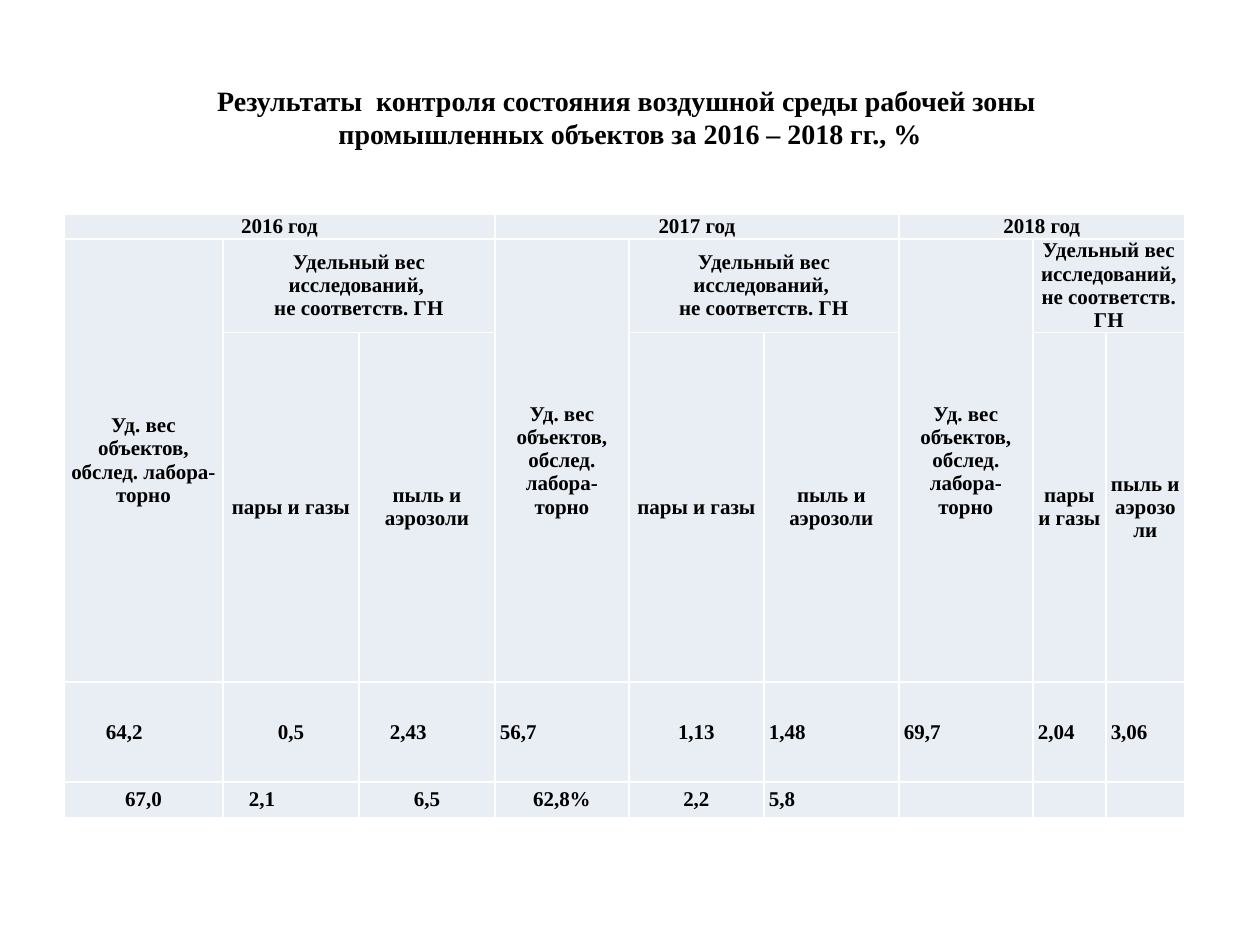
import copy
from dataclasses import dataclass

import pptx
import pptx.dml.color
import pptx.enum.text
import pptx.oxml
import pptx.oxml.ns
import pptx.util

EMU_PER_PX = 914400 / 126
CENTER = pptx.enum.text.PP_ALIGN.CENTER
LEFT = pptx.enum.text.PP_ALIGN.LEFT
MIDDLE = pptx.enum.text.MSO_ANCHOR.MIDDLE


@dataclass(frozen=True)
class Theme:
    font: str = "Times New Roman"
    ink: str = "000000"
    cell_fill: str = "E9EDF4"
    border: str = "FFFFFF"
    border_points: int = 1
    title_size: int = 16
    table_size: int = 12


@dataclass(frozen=True)
class Entry:
    """A table cell's text, alignment, left indent in px and span."""
    text: str
    align: pptx.enum.text.PP_ALIGN = CENTER
    indent: int = 0
    rows: int = 1
    columns: int = 1


THEME = Theme()
COLUMN_WIDTHS = [159, 136, 136, 134, 135, 135, 134, 73, 79]
ROW_HEIGHTS = [25, 76, 350, 100, 25]
YEARS = ["2016 год", "2017 год", "2018 год"]
SHARE_HEADINGS = [
    "Удельный вес исследований, \nне соответств. ГН",
    "Удельный вес исследований, \nне соответств. ГН",
    "Удельный вес исследований, не соответств. ГН",
]
VALUES = [
    [Entry("64,2", LEFT, 37), Entry("0,5"), Entry("2,43", LEFT, 26),
     Entry("56,7", LEFT), Entry("1,13"), Entry("1,48", LEFT),
     Entry("69,7", LEFT), Entry("2,04", LEFT), Entry("3,06", LEFT)],
    [Entry("67,0"), Entry("2,1", LEFT, 21), Entry("6,5"),
     Entry("62,8%"), Entry("2,2"), Entry("5,8", LEFT),
     Entry(""), Entry(""), Entry("")],
]


def px(length: int) -> pptx.util.Emu:
    return pptx.util.Emu(round(length * EMU_PER_PX))


def write_text(frame, text: str, *, size: int, align=CENTER, indent: int = 0) -> None:
    """Write one bold paragraph; a newline makes a line break."""
    paragraph = frame.paragraphs[0]
    paragraph.alignment = align
    if indent:
        paragraph._p.get_or_add_pPr().set("marL", str(px(indent)))
    for number, line in enumerate(text.split("\n")):
        if number:
            paragraph.add_line_break()
        run = paragraph.add_run()
        run.text = line
        run.font.name = THEME.font
        run.font.size = pptx.util.Pt(size)
        run.font.bold = True
        run.font.color.rgb = pptx.dml.color.RGBColor.from_string(THEME.ink)
    # Line breaks and the paragraph end take the size of the text
    for line_break in paragraph._p.findall(pptx.oxml.ns.qn("a:br")):
        line_break.append(copy.deepcopy(run.font._element))
    paragraph._p.get_or_add_endParaRPr().set("sz", str(size * 100))


def add_borders(cell) -> None:
    properties = cell._tc.get_or_add_tcPr()
    width = pptx.util.Pt(THEME.border_points)
    for position, side in enumerate("LRTB"):
        properties.insert(position, pptx.oxml.parse_xml(
            f'<a:ln{side} {pptx.oxml.ns.nsdecls("a")} w="{width}"><a:solidFill>'
            f'<a:srgbClr val="{THEME.border}"/></a:solidFill></a:ln{side}>'))


def format_cell(cell) -> None:
    cell.fill.solid()
    cell.fill.fore_color.rgb = pptx.dml.color.RGBColor.from_string(THEME.cell_fill)
    cell.vertical_anchor = MIDDLE
    cell.margin_left = cell.margin_right = px(5)
    cell.margin_top = cell.margin_bottom = 0
    add_borders(cell)


def fill_cell(table, row: int, column: int, entry: Entry) -> None:
    cell = table.cell(row, column)
    if entry.rows > 1 or entry.columns > 1:
        cell.merge(table.cell(row + entry.rows - 1, column + entry.columns - 1))
    write_text(cell.text_frame, entry.text, size=THEME.table_size,
               align=entry.align, indent=entry.indent)


def add_title(slide) -> None:
    title = slide.shapes.title
    title.left, title.top, title.width, title.height = map(px, (63, 38, 1134, 158))
    title.text_frame.vertical_anchor = MIDDLE
    write_text(title.text_frame,
               "Результаты  контроля состояния воздушной среды рабочей зоны \n"
               "промышленных объектов за 2016 – 2018 гг., %",
               size=THEME.title_size)


def add_results_table(slide) -> None:
    table = slide.shapes.add_table(
        len(ROW_HEIGHTS), len(COLUMN_WIDTHS), px(64), px(214),
        px(sum(COLUMN_WIDTHS)), px(sum(ROW_HEIGHTS))).table
    table.first_row = table.horz_banding = False
    for column, width in zip(table.columns, COLUMN_WIDTHS):
        column.width = px(width)
    for row, height in zip(table.rows, ROW_HEIGHTS):
        row.height = px(height)
    for cell in table.iter_cells():
        format_cell(cell)

    # Headings: three columns for each year
    for number, (year, share) in enumerate(zip(YEARS, SHARE_HEADINGS)):
        first = number * 3
        fill_cell(table, 0, first, Entry(year, columns=3))
        fill_cell(table, 1, first, Entry("Уд. вес объектов, обслед. лабора-торно", rows=2))
        fill_cell(table, 1, first + 1, Entry(share, columns=2))
        fill_cell(table, 2, first + 1, Entry("пары и газы"))
        fill_cell(table, 2, first + 2, Entry("пыль и аэрозоли"))

    # Values
    for row, entries in enumerate(VALUES, start=3):
        for column, entry in enumerate(entries):
            fill_cell(table, row, column, entry)


def main() -> None:
    presentation = pptx.Presentation()
    presentation.slide_width = px(1260)
    presentation.slide_height = px(945)
    slide = presentation.slides.add_slide(presentation.slide_layouts[5])
    add_title(slide)
    add_results_table(slide)
    presentation.save("out.pptx")


if __name__ == "__main__":
    main()
